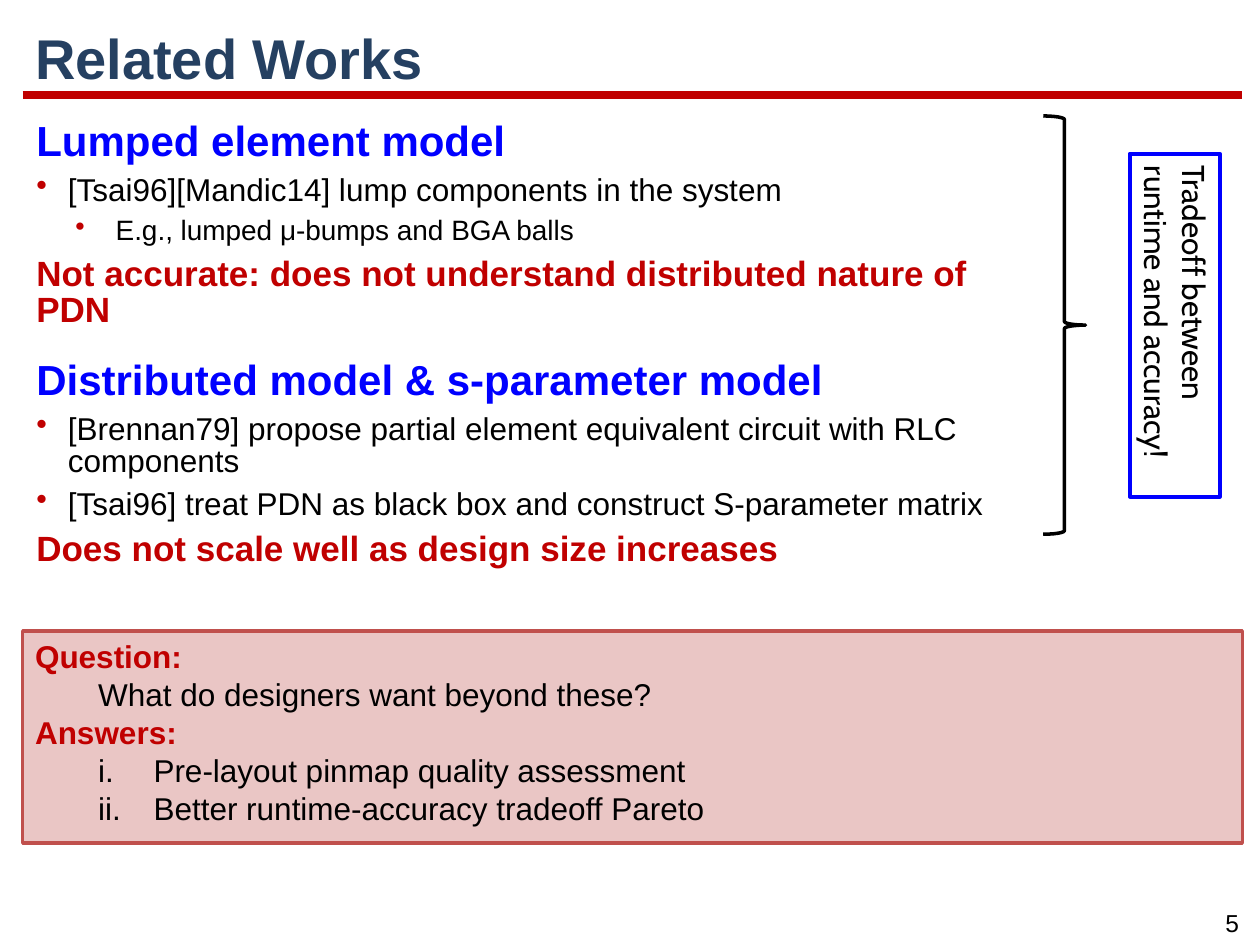
from lxml import etree
from pptx import Presentation, util as u
from pptx.dml.color import RGBColor
from pptx.enum import shapes, text
from pptx.oxml import ns

RED = RGBColor(0xC0, 0x00, 0x00)
NAVY = RGBColor(0x25, 0x40, 0x61)
BLUE = RGBColor(0x00, 0x00, 0xFF)
BLACK = RGBColor(0x00, 0x00, 0x00)
ROSE = RGBColor(0xC0, 0x50, 0x4D)

WIDTH, HEIGHT = u.Inches(10), u.Inches(7.5)
COLUMN, ROW = WIDTH / 100, HEIGHT / 75  # square grid cells
LEFT, SPAN = 1.8, 96.8  # content columns shared by the regions

# Run formats
TITLE = dict(size=u.Pt(32), bold=True, color=NAVY)
HEADING = dict(size=u.Pt(24), bold=True, color=BLUE)
VERDICT = dict(size=u.Pt(20), bold=True, color=RED)
LABEL = dict(size=u.Pt(18), bold=True, color=RED)
PLAIN = dict(size=u.Pt(18), bold=False, color=BLACK)
DETAIL = dict(PLAIN, size=u.Pt(16))
NOTE = dict(PLAIN, name="Cabin")
NUMBER = dict(PLAIN, size=u.Pt(14))

# Bullets: left margin, hanging width (grid columns), element and its attributes
BULLET = (2.5, 2.5, "buChar", {"char": "•"})
SUB_BULLET = (6.3, 3.2, "buChar", {"char": "•"})
ROMAN = (9.4, 4.4, "buAutoNum", {"type": "romanLcPeriod"})
INDENT = (5, 0, "buNone", {})


def place(box):
    left, top, width, height = box
    return [int(n) for n in (left * COLUMN, top * ROW, width * COLUMN, height * ROW)]


def set_format(target, values):
    for name, value in values.items():
        if name == "color":
            target.color.rgb = value
        else:
            setattr(target, name, value)


def set_bullet(paragraph, bullet, color):
    margin, hang, tag, attributes = bullet
    properties = paragraph._p.get_or_add_pPr()
    properties.set("marL", str(int(margin * COLUMN)))
    properties.set("indent", str(int(-hang * COLUMN)))
    if color is not None:
        holder = etree.SubElement(properties, ns.qn("a:buClr"))
        etree.SubElement(holder, ns.qn("a:srgbClr"), val=str(color))
    etree.SubElement(properties, ns.qn("a:" + tag), attributes)


def write(shape, lines, anchor=text.MSO_ANCHOR.TOP, wrap=True, bullet_color=None, **layout):
    """Fill a shape with (words, run format, bullet, space before) lines."""
    frame = shape.text_frame
    set_format(frame, dict(word_wrap=wrap, vertical_anchor=anchor))
    for index, (words, style, bullet, space) in enumerate(lines):
        paragraph = frame.add_paragraph() if index else frame.paragraphs[0]
        set_format(paragraph, dict(dict(alignment=text.PP_ALIGN.LEFT), **layout))
        paragraph.space_before = u.Pt(space)
        if bullet:
            set_bullet(paragraph, bullet, bullet_color)
        run = paragraph.add_run()
        run.text = words
        set_format(run.font, dict(dict(name="Arial"), **style))


def add_outline(slide, kind, box, color, weight):
    shape = slide.shapes.add_shape(kind, *place(box))
    shape.shadow.inherit = False
    shape.fill.background()
    set_format(shape.line, dict(color=color, width=u.Pt(weight)))
    return shape


def add_header(slide, box):
    left, top, width, height = box
    # Rule under the title
    x, y, length, _ = place((left, top + 0.91 * height, width, 0))
    rule = slide.shapes.add_connector(shapes.MSO_CONNECTOR.STRAIGHT, x, y, x + length, y)
    set_format(rule.line, dict(color=RED, width=u.Pt(4.5)))
    etree.SubElement(rule._element.spPr, ns.qn("a:effectLst"))
    # Title
    title = slide.shapes.add_textbox(*place(box))
    write(title, [("Related Works", TITLE, None, 0)],
          anchor=text.MSO_ANCHOR.MIDDLE, line_spacing=0.9)


def add_models(slide, box):
    body = slide.shapes.add_textbox(*place(box))
    write(body, [
        ("Lumped element model", HEADING, None, 8),
        ("[Tsai96][Mandic14] lump components in the system", PLAIN, BULLET, 6.3),
        ("E.g., lumped μ-bumps and BGA balls", DETAIL, SUB_BULLET, 5.6),
        ("Not accurate: does not understand distributed nature of PDN", VERDICT, None, 6.5),
        ("Distributed model & s-parameter model", HEADING, None, 18),
        ("[Brennan79] propose partial element equivalent circuit with RLC components",
         PLAIN, BULLET, 6.3),
        ("[Tsai96] treat PDN as black box and construct S-parameter matrix",
         PLAIN, BULLET, 6.3),
        ("Does not scale well as design size increases", VERDICT, None, 6.5),
    ], bullet_color=RED, line_spacing=0.85)


def add_tradeoff(slide, box):
    left, top, width, height = box
    # Brace spanning both models
    add_outline(slide, shapes.MSO_SHAPE.RIGHT_BRACE,
                (left, top, 0.24 * width, height), BLACK, 2)
    # Note turned on its side, centred on the brace's point
    long_side, short_side = 0.82 * height, 0.51 * width
    note = add_outline(slide, shapes.MSO_SHAPE.RECTANGLE,
                       (left + width - (long_side + short_side) / 2,
                        top + (height - short_side) / 2, long_side, short_side), BLUE, 2.25)
    note.rotation = 90
    write(note, [("Tradeoff between runtime and accuracy!", NOTE, None, 0)])


def add_question(slide, box):
    panel = add_outline(slide, shapes.MSO_SHAPE.RECTANGLE, box, ROSE, 2)
    panel.fill.solid()
    panel.fill.fore_color.rgb = ROSE
    color = panel._element.spPr.find(".//" + ns.qn("a:srgbClr"))
    etree.SubElement(color, ns.qn("a:alpha"), val="32000")
    write(panel, [
        ("Question:", LABEL, None, 0),
        ("What do designers want beyond these?", PLAIN, INDENT, 0),
        ("Answers:", LABEL, None, 0),
        ("Pre-layout pinmap quality assessment", PLAIN, ROMAN, 0),
        ("Better runtime-accuracy tradeoff Pareto", PLAIN, ROMAN, 0),
    ])


def add_page_number(slide, box):
    number = slide.shapes.add_textbox(*place(box))
    write(number, [("5", NUMBER, None, 0)], wrap=False, alignment=text.PP_ALIGN.CENTER)


def main():
    presentation = Presentation()
    presentation.slide_width, presentation.slide_height = WIDTH, HEIGHT
    slide = presentation.slides.add_slide(presentation.slide_layouts[6])
    add_header(slide, (LEFT, 1.6, SPAN, 6.5))
    add_models(slide, (LEFT + 0.1, 9.2, 82.4, 35.7))
    add_question(slide, (LEFT, 50.1, SPAN, 16.8))
    add_tradeoff(slide, (82.8, 9.2, 14, 33.2))
    add_page_number(slide, (95.6, 71.6, 4.4, 3.4))
    presentation.save("out.pptx")


if __name__ == "__main__":
    main()
